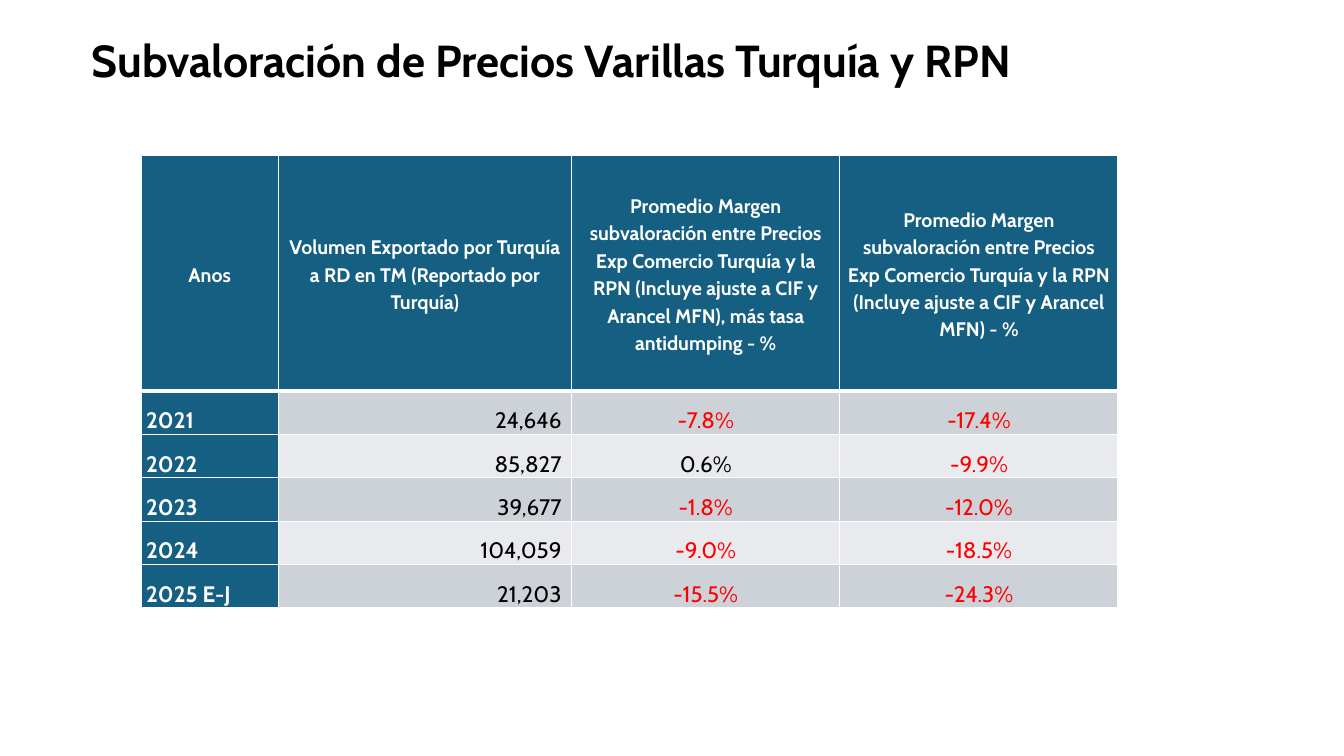
from lxml import etree
from pptx import Presentation
from pptx.dml.color import RGBColor
from pptx.enum.text import MSO_ANCHOR, MSO_AUTO_SIZE, PP_ALIGN
from pptx.oxml.ns import qn
from pptx.util import Inches, Pt

LEFT, CENTER, RIGHT = PP_ALIGN.LEFT, PP_ALIGN.CENTER, PP_ALIGN.RIGHT
MIDDLE, BOTTOM = MSO_ANCHOR.MIDDLE, MSO_ANCHOR.BOTTOM
GROW = MSO_AUTO_SIZE.SHAPE_TO_FIT_TEXT

WHITE = RGBColor(0xFF, 0xFF, 0xFF)
BLACK = RGBColor(0x00, 0x00, 0x00)
RED = RGBColor(0xFF, 0x00, 0x00)
BLUE = RGBColor(0x15, 0x60, 0x82)
BAND_DARK = RGBColor(0xCC, 0xD2, 0xD8)
BAND_LIGHT = RGBColor(0xE8, 0xEA, 0xED)
FONT = "Cabin"

COLUMN_WIDTHS = [1.36, 2.91, 2.66, 2.76]
HEADER_HEIGHT, ROW_HEIGHT = 2.34, 0.43
ROWS = [
    ["Anos",
     "Volumen Exportado por Turquía a RD en TM (Reportado por Turquía)",
     "Promedio Margen subvaloración entre Precios Exp Comercio Turquía y la RPN "
     "(Incluye ajuste a CIF y Arancel MFN), más tasa antidumping - %",
     "Promedio Margen subvaloración entre Precios Exp Comercio Turquía y la RPN "
     "(Incluye ajuste a CIF y Arancel MFN) - %"],
    ["2021", "24,646", "-7.8%", "-17.4%"],
    ["2022", "85,827", "0.6%", "-9.9%"],
    ["2023", "39,677", "-1.8%", "-12.0%"],
    ["2024", "104,059", "-9.0%", "-18.5%"],
    ["2025 E-J", "21,203", "-15.5%", "-24.3%"],
]


def add_span(para, text, size, color, bold):
    span = para.add_run()
    span.text = text
    span.font.name = FONT
    span.font.size = Pt(size)
    span.font.bold = bold
    span.font.color.rgb = color


def add_border(cell, side, points):
    line = etree.SubElement(cell._tc.get_or_add_tcPr(), qn(f"a:{side}"), w=str(Pt(points)))
    fill = etree.SubElement(line, qn("a:solidFill"))
    etree.SubElement(fill, qn("a:srgbClr"), val=str(WHITE))


deck = Presentation()
deck.slide_width, deck.slide_height = Inches(13.33), Inches(7.5)
page = deck.slides.add_slide(deck.slide_layouts[6])

# Table frame
table = page.shapes.add_table(
    len(ROWS), len(COLUMN_WIDTHS), Inches(1.4), Inches(1.54), Inches(sum(COLUMN_WIDTHS)),
    Inches(HEADER_HEIGHT + ROW_HEIGHT * (len(ROWS) - 1))).table
for column, width in zip(table.columns, COLUMN_WIDTHS):
    column.width = Inches(width)
for index, row in enumerate(table.rows):
    row.height = Inches(ROW_HEIGHT if index else HEADER_HEIGHT)

# Table cells
for row_index, values in enumerate(ROWS):
    for column_index, value in enumerate(values):
        cell = table.cell(row_index, column_index)
        is_header = row_index == 0
        is_label = is_header or column_index == 0
        is_volume = column_index == 1 and not is_header

        # Borders, with a thicker rule under the header
        add_border(cell, "lnL", 1)
        add_border(cell, "lnR", 1)
        add_border(cell, "lnT", 3 if row_index == 1 else 1)
        add_border(cell, "lnB", 3 if is_header else 1)

        cell.fill.solid()
        band = BAND_DARK if row_index % 2 else BAND_LIGHT
        cell.fill.fore_color.rgb = BLUE if is_label else band

        cell.margin_top = cell.margin_bottom = Inches(0)
        cell.margin_left = Inches(0.05)
        cell.margin_right = Inches(0.1 if is_volume else 0.05)
        cell.vertical_anchor = MIDDLE if is_header else BOTTOM

        para = cell.text_frame.paragraphs[0]
        para.line_spacing = 1.15
        para.space_after = Pt(10)
        if is_volume:
            para.alignment = RIGHT
        else:
            para.alignment = CENTER if is_header or column_index else LEFT
        value_color = RED if value.startswith("-") else BLACK
        add_span(para, value, 14 if is_header else 16,
                 WHITE if is_label else value_color, is_label)

# Title
title = page.shapes.add_textbox(Inches(0.81), Inches(0.28), Inches(10.79), Inches(0.64))
title.text_frame.word_wrap = True
title.text_frame.auto_size = GROW
add_span(title.text_frame.paragraphs[0],
         "Subvaloración de Precios Varillas Turquía y RPN", 32, BLACK, True)

deck.save("out.pptx")
